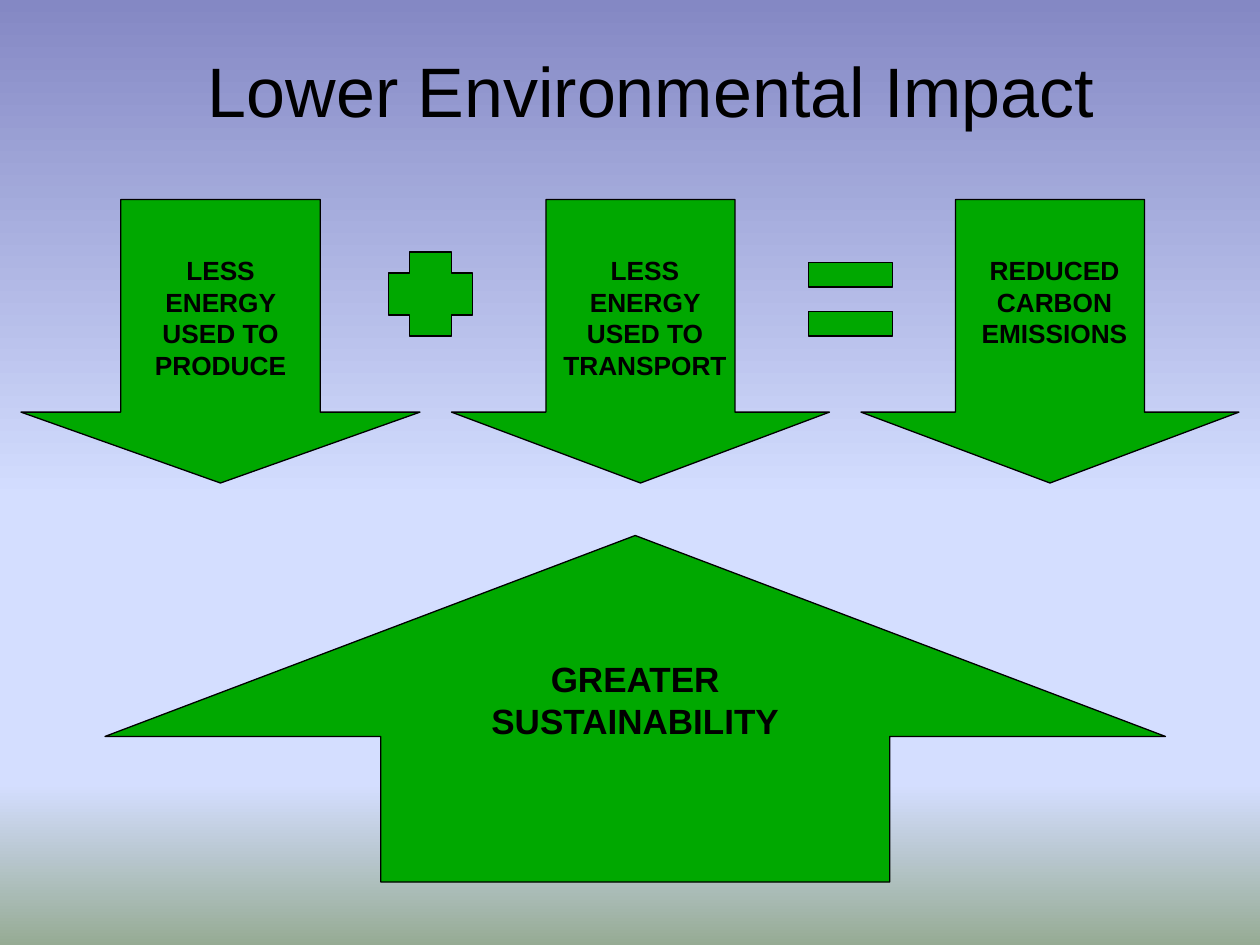
from lxml import etree
from pptx import Presentation
from pptx.dml.color import RGBColor
from pptx.enum.shapes import MSO_SHAPE
from pptx.enum.text import MSO_ANCHOR, PP_ALIGN
from pptx.oxml.ns import qn
from pptx.util import Pt

DOWN, UP = MSO_SHAPE.DOWN_ARROW, MSO_SHAPE.UP_ARROW
CROSS, RECT = MSO_SHAPE.CROSS, MSO_SHAPE.RECTANGLE
MIDDLE, CENTER = MSO_ANCHOR.MIDDLE, PP_ALIGN.CENTER
GREEN = RGBColor(0x00, 0xA8, 0x00)
BLACK = RGBColor(0x00, 0x00, 0x00)
DUSK = RGBColor(0x84, 0x88, 0xC4)
SKY = RGBColor(0xD4, 0xDE, 0xFF)
GRASS = RGBColor(0x96, 0xAB, 0x94)
FONT = "Arial"


def add_block(home, kind, left, top, width, height, adjust=()):
    """Add a green shape with a thin black outline."""
    block = home.shapes.add_shape(kind, Pt(left), Pt(top), Pt(width), Pt(height))
    block.shadow.inherit = False
    block.fill.solid()
    block.fill.fore_color.rgb = GREEN
    block.line.color.rgb = BLACK
    block.line.width = Pt(0.75)
    for i, value in enumerate(adjust):
        block.adjustments[i] = value


def add_label(home, text, size, left, top, width, height):
    """Add a bold centred caption."""
    frame = home.shapes.add_textbox(Pt(left), Pt(top), Pt(width), Pt(height)).text_frame
    frame.word_wrap = True
    para = frame.paragraphs[0]
    para.alignment = CENTER
    para.line_spacing = Pt(1.2 * size)
    run = para.add_run()
    run.text = text
    run.font.name = FONT
    run.font.size = Pt(size)
    run.font.bold = True
    run.font.color.rgb = BLACK


deck = Presentation()
deck.slide_width, deck.slide_height = Pt(720), Pt(540)
slide = deck.slides.add_slide(deck.slide_layouts[5])

# Background: sky fading down to grass
fill = slide.background.fill
fill.gradient()
fill.gradient_angle = 270
stops = next(slide.element.iter(qn("a:gsLst")))
for stop in list(stops):
    stops.remove(stop)
for place, color in ((0, DUSK), (53, SKY), (83, SKY), (100, GRASS)):
    stop = etree.SubElement(stops, qn("a:gs"), pos=str(place * 1000))
    etree.SubElement(stop, qn("a:srgbClr"), val=str(color))

# Title
title = slide.shapes.title
title.left, title.top, title.width, title.height = Pt(42), Pt(0), Pt(660), Pt(102)
title.text_frame.vertical_anchor = MIDDLE
para = title.text_frame.paragraphs[0]
para.alignment = CENTER
run = para.add_run()
run.text = "Lower Environmental Impact"
run.font.name = FONT
run.font.size = Pt(40)
run.font.color.rgb = BLACK

# Down arrows: left, width, caption, then caption left, width and height
arrows = (
    (12, 228, "LESS ENERGY USED TO PRODUCE", 76.3, 99.4, 79.2),
    (258, 216, "LESS ENERGY USED TO TRANSPORT", 314.6, 108, 79.2),
    (492, 216, "REDUCED CARBON EMISSIONS", 548.6, 108, 61.2),
)
for left, width, text, inset, span, height in arrows:
    group = slide.shapes.add_group_shape()
    add_block(group, DOWN, left, 114, width, 162, (0.5, 0.25))
    add_label(group, text, 15, inset, 141.8, span, height)

# Plus and equals signs
add_block(slide, CROSS, 222, 144, 48, 48, (0.25,))
equals = slide.shapes.add_group_shape()
for top in (150, 178):
    add_block(equals, RECT, 462, top, 48, 14)

# Up arrow with the outcome
group = slide.shapes.add_group_shape()
add_block(group, UP, 60, 306, 606, 198, (0.48, 0.58))
add_label(group, "GREATER SUSTAINABILITY", 20, 258, 372, 210, 55.4)

deck.save("out.pptx")
